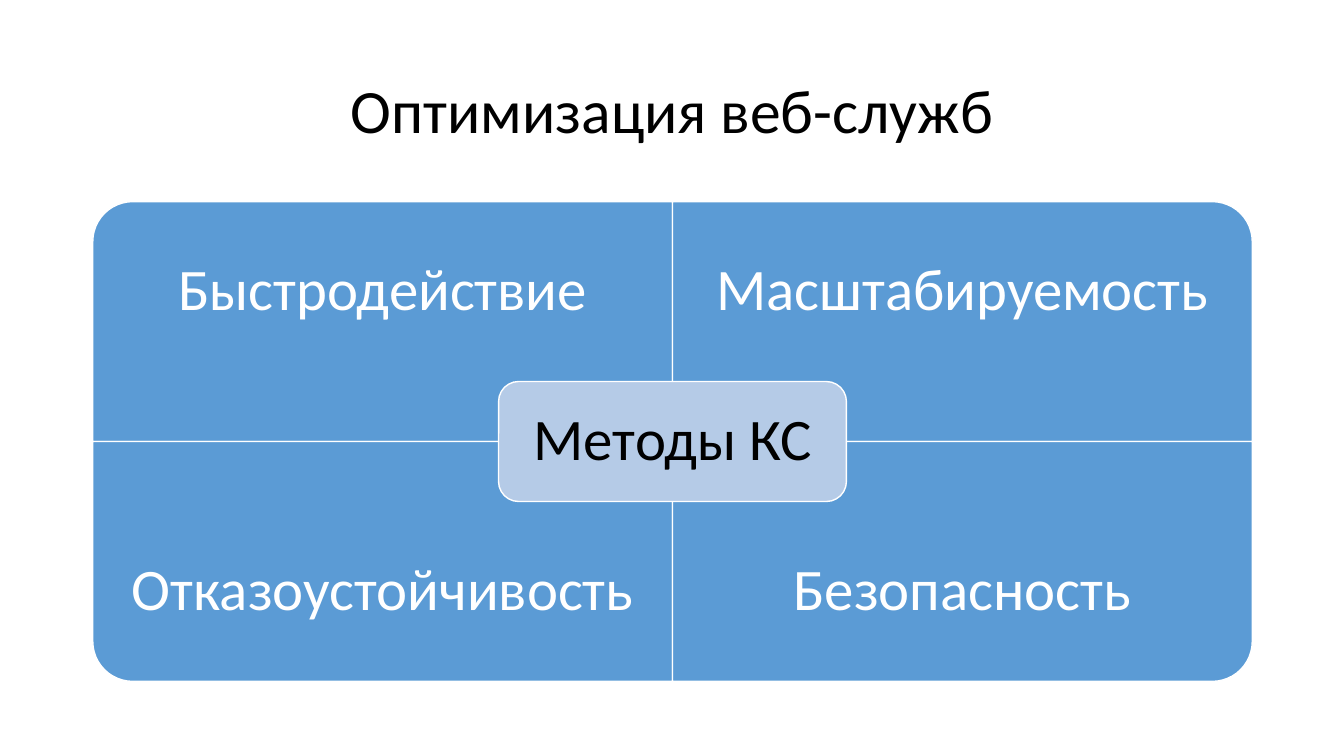
import pptx
import pptx.dml.color
import pptx.enum.shapes
import pptx.enum.text
import pptx.util

Inches = pptx.util.Inches
SHAPE = pptx.enum.shapes.MSO_SHAPE
HUES = {"blue": "5B9BD5", "pale": "B5CBE7", "white": "FFFFFF", "black": "000000"}


def tint(name):
    """Return the named colour."""
    return pptx.dml.color.RGBColor.from_string(HUES[name])


def write(shapes, text, box, size=42, hue="white", inset=0.33):
    """Add a centred text box with one line of text."""
    label = shapes.add_textbox(*map(Inches, box))
    frame = label.text_frame
    frame.word_wrap = True
    frame.vertical_anchor = pptx.enum.text.MSO_ANCHOR.MIDDLE
    frame.margin_left = frame.margin_right = Inches(inset)
    frame.margin_top = frame.margin_bottom = Inches(inset)
    line = frame.paragraphs[0]
    line.alignment = pptx.enum.text.PP_ALIGN.CENTER
    line.line_spacing = 0.9
    run = line.add_run()
    run.text = text
    run.font.name = "Calibri"
    run.font.size = pptx.util.Pt(size)
    run.font.color.rgb = tint(hue)


def panel(shapes, kind, box, hue, turn=0):
    """Add a filled shape that covers the box once it is turned."""
    left, top, width, height = box
    if turn % 180:
        left, top = left + (width - height) / 2, top + (height - width) / 2
        width, height = height, width
    shape = shapes.add_shape(kind, *map(Inches, (left, top, width, height)))
    shape.rotation = turn
    shape.shadow.inherit = False
    shape.fill.solid()
    shape.fill.fore_color.rgb = tint(hue)
    shape.line.color.rgb = tint("white")
    shape.line.width = pptx.util.Pt(1)


def matrix(slide, box, names, core):
    """Draw four quarters and the core tile inside the box."""
    shapes = slide.shapes.add_group_shape().shapes
    left, top, width, height = box
    wide, high = width / 2, height / 2
    tall = high * 0.75
    turns = (270, 0, 180, 90)
    for place, (name, turn) in enumerate(zip(names, turns)):
        row, col = divmod(place, 2)
        x, y = left + col * wide, top + row * high
        panel(shapes, SHAPE.ROUND_1_RECTANGLE, (x, y, wide, high), "blue", turn)
        write(shapes, name, (x, y + row * (high - tall), wide, tall))
    span, rise = wide * 0.6, high / 2
    x, y = left + wide - span / 2, top + high - rise / 2
    panel(shapes, SHAPE.ROUNDED_RECTANGLE, (x, y, span, rise), "pale")
    pad = 0.06
    inner = (x + pad, y + pad, span - 2 * pad, rise - 2 * pad)
    write(shapes, core, inner, hue="black", inset=0.17)


def main():
    """Build and save the slide."""
    deck = pptx.Presentation()
    deck.slide_width, deck.slide_height = Inches(13.33), Inches(7.5)
    slide = deck.slides.add_slide(deck.slide_layouts[6])
    write(slide.shapes, "Оптимизация веб-служб", (0.92, 0.4, 11.5, 1.45),
          size=44, hue="black", inset=0.1)
    names = ("Быстродействие", "Масштабируемость",
             "Отказоустойчивость", "Безопасность")
    matrix(slide, (0.92, 2, 11.5, 4.76), names, "Методы КС")
    deck.save("out.pptx")


if __name__ == "__main__":
    main()
